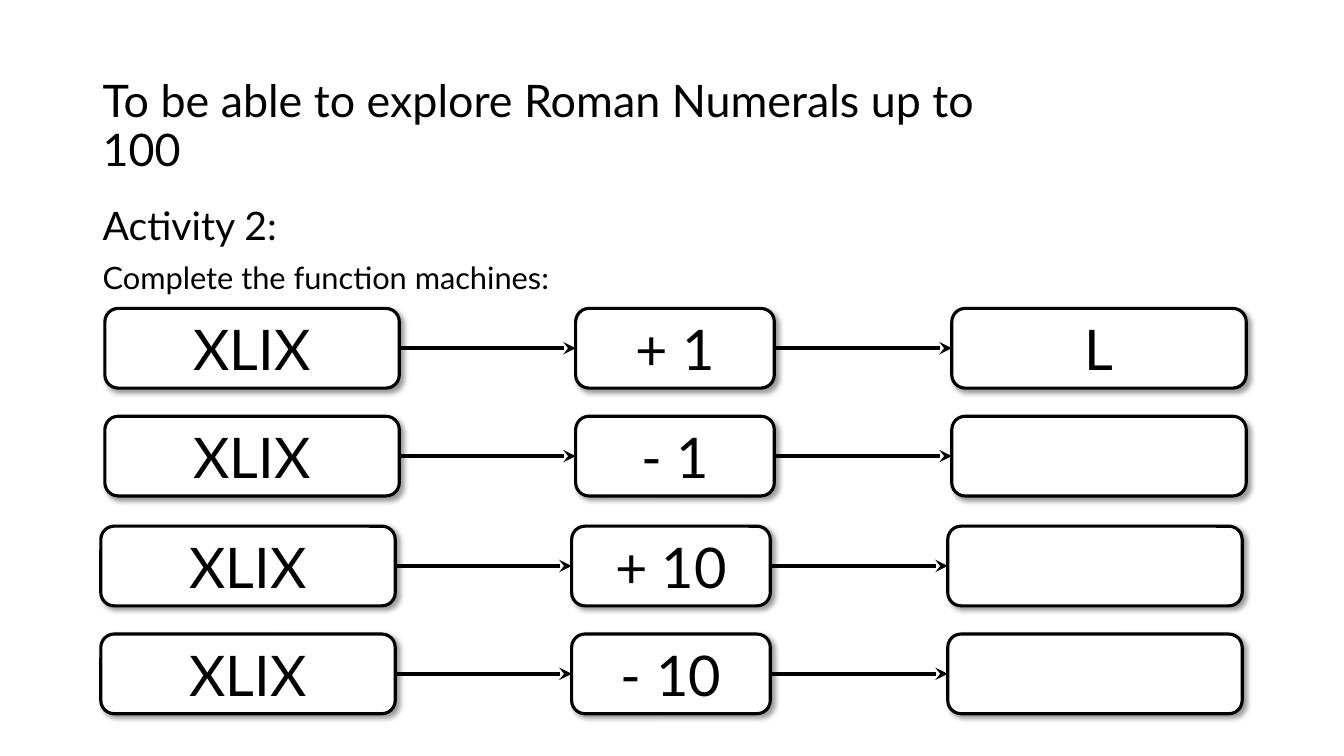
from lxml.etree import SubElement
from pptx import Presentation
from pptx.dml.color import RGBColor
from pptx.enum.shapes import MSO_CONNECTOR, MSO_SHAPE
from pptx.enum.text import MSO_ANCHOR, PP_ALIGN
from pptx.oxml.ns import qn
from pptx.util import Inches, Pt

FONT = "Lato"
INK = "000000"
PAPER = "FFFFFF"

# Grid of the function machines, in inches
COLUMNS = [(0, 2.92), (4.67, 1.97), (8.4, 2.92)]  # offset and width
BOX_HEIGHT = 0.79
ROW_PITCH = 1.07
PAIR_ORIGINS = [(1.04, 3.06), (1, 5.22)]  # two pairs of rows
MACHINES = [
    ("XLIX", "+ 1", "L"),
    ("XLIX", "- 1", ""),
    ("XLIX", "+ 10", ""),
    ("XLIX", "- 10", ""),
]


def color(hex_string):
    return RGBColor.from_string(hex_string)


def add_run(paragraph, text, size):
    run = paragraph.add_run()
    run.text = text
    run.font.name = FONT
    run.font.size = Pt(size)
    run.font.color.rgb = color(INK)


def add_text(slide, place, lines, anchor=MSO_ANCHOR.TOP):
    frame = slide.shapes.add_textbox(*map(Inches, place)).text_frame
    frame.word_wrap = True
    frame.vertical_anchor = anchor
    for index, (text, size) in enumerate(lines):
        paragraph = frame.add_paragraph() if index else frame.paragraphs[0]
        paragraph.line_spacing = 0.9
        if index:
            paragraph.space_before = Pt(10)
        add_run(paragraph, text, size)


def add_shadow(box):
    effects = SubElement(box.fill._xPr, qn("a:effectLst"))
    shadow = SubElement(effects, qn("a:outerShdw"), blurRad=str(Pt(4)),
                        dist=str(Pt(3)), dir="2700000", algn="tl", rotWithShape="0")
    tint = SubElement(shadow, qn("a:srgbClr"), val=INK)
    SubElement(tint, qn("a:alpha"), val="40000")


def add_box(slide, left, top, width, label):
    box = slide.shapes.add_shape(
        MSO_SHAPE.ROUNDED_RECTANGLE,
        *map(Inches, (left, top, width, BOX_HEIGHT)))
    box.fill.solid()
    box.fill.fore_color.rgb = color(PAPER)
    box.line.color.rgb = color(INK)
    box.line.width = Pt(2.25)
    add_shadow(box)
    if label:
        box.text_frame.vertical_anchor = MSO_ANCHOR.MIDDLE
        paragraph = box.text_frame.paragraphs[0]
        paragraph.alignment = PP_ALIGN.CENTER
        add_run(paragraph, label, 40)
    return box


def add_arrow(slide, source, target):
    arrow = slide.shapes.add_connector(MSO_CONNECTOR.STRAIGHT, 0, 0, 0, 0)
    arrow.begin_connect(source, 3)
    arrow.end_connect(target, 1)
    arrow.line.color.rgb = color(INK)
    arrow.line.width = Pt(3)
    SubElement(arrow.line._get_or_add_ln(), qn("a:tailEnd"), type="stealth")
    SubElement(arrow._element.spPr, qn("a:effectLst"))


def add_machine(slide, left, top, labels):
    boxes = [add_box(slide, left + offset, top, width, label)
             for (offset, width), label in zip(COLUMNS, labels)]
    for source, target in zip(boxes, boxes[1:]):
        add_arrow(slide, source, target)


def main():
    deck = Presentation()
    deck.slide_width, deck.slide_height = Inches(13.33), Inches(7.5)
    slide = deck.slides.add_slide(deck.slide_layouts[6])

    # Title and instructions
    add_text(slide, (0.92, 0.54, 9.6, 1.45),
             [("To be able to explore Roman Numerals up to 100", 32)],
             MSO_ANCHOR.MIDDLE)
    add_text(slide, (0.92, 2, 11.5, 1),
             [("Activity 2:", 28), ("Complete the function machines:", 22)])

    # Function machines
    for index, labels in enumerate(MACHINES):
        pair, row = divmod(index, 2)
        left, top = PAIR_ORIGINS[pair]
        add_machine(slide, left, top + row * ROW_PITCH, labels)

    deck.save("out.pptx")


if __name__ == "__main__":
    main()
